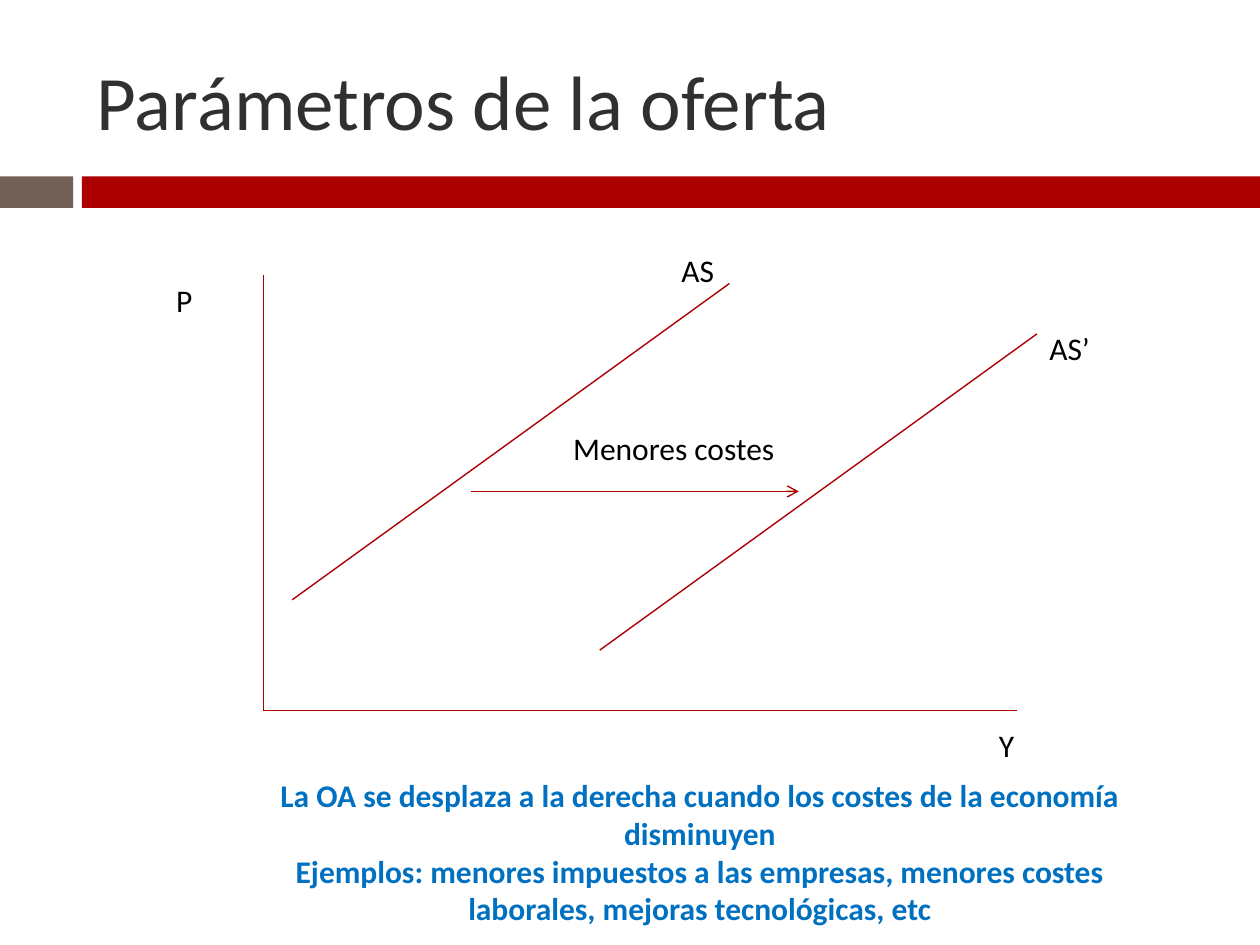
import pptx
import pptx.util
import pptx.dml.color
import pptx.enum.shapes
import pptx.enum.text
import pptx.oxml.ns
import lxml.etree

Inches = pptx.util.Inches
ALIGN = pptx.enum.text.PP_ALIGN
ANCHOR = pptx.enum.text.MSO_ANCHOR

COLORS = {"red": "AD0101", "brown": "726056", "title": "303030",
          "black": "000000", "blue": "0070C0"}

BANDS = [(0, 0.58, "brown"), (0.65, 9.35, "red")]
BAND_TOP, BAND_HEIGHT = 1.4, 0.25

ORIGIN = (2.09, 5.64)
AXES = [(ORIGIN[0], 2.18, *ORIGIN), (*ORIGIN, 8.07, ORIGIN[1])]
SUPPLY_STARTS = [(2.32, 4.76), (4.76, 5.16)]
SUPPLY_RUN, SUPPLY_RISE = 3.47, 2.51
SHIFT = (3.74, 3.9, 6.34, 3.9)

LABELS = [
    ("P", 1.3, 2.18, 0.63),
    ("Y", 7.83, 5.71, 0.47),
    ("AS", 5.31, 1.94, 1.02),
    ("AS’", 8.23, 2.56, 1.02),
    ("Menores costes", 4.45, 3.36, 2.05),
]
LABEL_HEIGHT = 0.4

TITLE = "Parámetros de la oferta"
NOTES = [
    "La OA se desplaza a la derecha cuando los costes de la economía disminuyen",
    "Ejemplos: menores impuestos a las empresas, menores costes laborales, mejoras tecnológicas, etc",
]


def rgb(name):
    return pptx.dml.color.RGBColor.from_string(COLORS[name])


def add_band(s, left, width, color):
    sp = s.shapes.add_shape(pptx.enum.shapes.MSO_SHAPE.RECTANGLE, Inches(left),
                            Inches(BAND_TOP), Inches(width), Inches(BAND_HEIGHT))
    sp.shadow.inherit = False
    sp.fill.solid()
    sp.fill.fore_color.rgb = rgb(color)
    sp.line.fill.background()


def add_line(s, x1, y1, x2, y2, arrow=False):
    ln = s.shapes.add_connector(pptx.enum.shapes.MSO_CONNECTOR.STRAIGHT,
                                *map(Inches, (x1, y1, x2, y2)))
    ln.line.color.rgb = rgb("red")
    ln.line.width = pptx.util.Pt(0.79)
    qn = pptx.oxml.ns.qn
    if arrow:
        lxml.etree.SubElement(ln.line._get_or_add_ln(), qn("a:tailEnd"), type="arrow")
    lxml.etree.SubElement(ln._element.spPr, qn("a:effectLst"))


def add_text(s, lines, box, size=18, color="black", bold=False,
             align=ALIGN.LEFT, anchor=ANCHOR.TOP):
    tf = s.shapes.add_textbox(*map(Inches, box)).text_frame
    for key, value in {"word_wrap": True, "vertical_anchor": anchor}.items():
        setattr(tf, key, value)
    font = {"name": "Calibri", "size": pptx.util.Pt(size), "bold": bold}
    for i, line in enumerate(lines):
        p = tf.add_paragraph() if i else tf.paragraphs[0]
        p.alignment = align
        r = p.add_run()
        r.text = line
        for key, value in font.items():
            setattr(r.font, key, value)
        r.font.color.rgb = rgb(color)


def main():
    prs = pptx.Presentation()
    prs.slide_width, prs.slide_height = Inches(10), Inches(7.5)
    s = prs.slides.add_slide(prs.slide_layouts[6])

    for band in BANDS:
        add_band(s, *band)
    add_text(s, [TITLE], (0.67, 0.25, 8.92, 1.08), size=44, color="title",
             anchor=ANCHOR.MIDDLE)

    for axis in AXES:
        add_line(s, *axis)
    for x, y in SUPPLY_STARTS:
        add_line(s, x, y, x + SUPPLY_RUN, y - SUPPLY_RISE)
    add_line(s, *SHIFT, arrow=True)

    for text, left, top, width in LABELS:
        add_text(s, [text], (left, top, width, LABEL_HEIGHT))
    add_text(s, NOTES, (2.09, 6.11, 6.93, 1.31), color="blue", bold=True,
             align=ALIGN.CENTER)

    prs.save("out.pptx")


if __name__ == "__main__":
    main()
